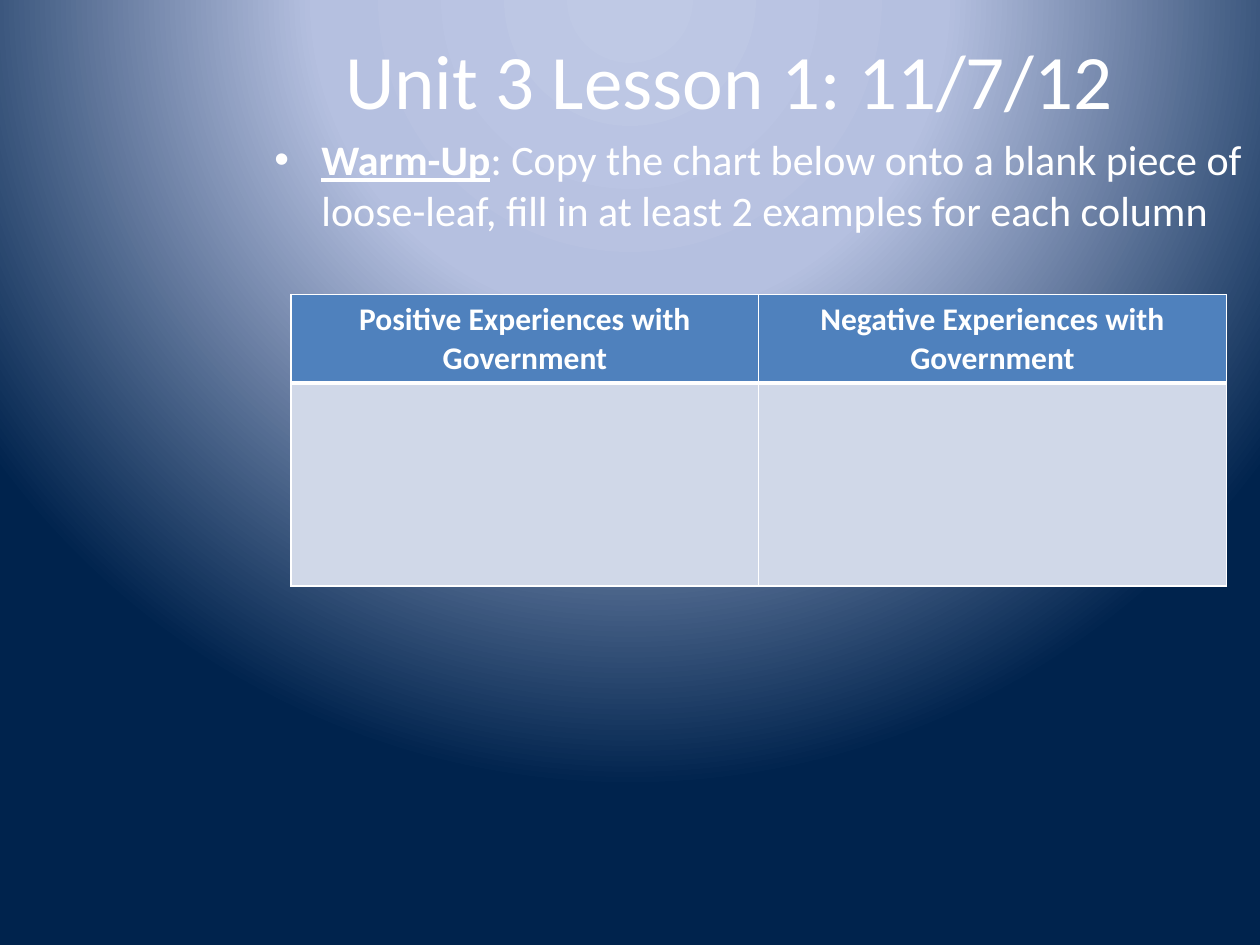
from typing import NamedTuple

from lxml import etree
from pptx import Presentation
from pptx.dml.color import RGBColor
from pptx.enum import text
from pptx.oxml.ns import qn
from pptx.util import Cm, Pt

WHITE = "FFFFFF"
HEADER_BLUE = "4F81BD"
PALE_BLUE = "D0D8E8"


class Box(NamedTuple):
    left: float
    top: float
    width: float
    height: float

    def lengths(self) -> list:
        return [Cm(value) for value in self]


class Row(NamedTuple):
    labels: tuple
    height: float
    fill: str
    top_line: float
    bottom_line: float


TITLE_BOX = Box(5.28, 0, 18.85, 3.18)
WARM_UP_BOX = Box(5.28, 2.57, 20.12, 14.7)
TABLE_BOX = Box(5.87, 5.94, 18.85, 5.87)
ROWS = [
    Row(
        ("Positive Experiences with Government", "Negative Experiences with Government"),
        1.78, HEADER_BLUE, 1, 3,
    ),
    Row(("", ""), 4.09, PALE_BLUE, 3, 1),
]
BACKGROUND_STOPS = [(0, "BFC9E5"), (40, "B5C0E0"), (100, "00234D")]


def color(value: str) -> RGBColor:
    return RGBColor.from_string(value)


def add_text(paragraph, content: str, *, size: float, bold=False, underline=False) -> None:
    run = paragraph.add_run()
    run.text = content
    run.font.name = "Calibri"
    run.font.size = Pt(size)
    run.font.bold = bold
    run.font.underline = underline
    run.font.color.rgb = color(WHITE)


def set_background(slide) -> None:
    slide.background.fill.gradient()
    gradient = slide.element.find(".//" + qn("a:gradFill"))
    for child in list(gradient):
        gradient.remove(child)
    stops = etree.SubElement(gradient, qn("a:gsLst"))
    for position, value in BACKGROUND_STOPS:
        stop = etree.SubElement(stops, qn("a:gs"), pos=str(position * 1000))
        etree.SubElement(stop, qn("a:srgbClr"), val=value)
    circle = etree.SubElement(gradient, qn("a:path"), path="circle")
    etree.SubElement(circle, qn("a:fillToRect"), l="50000", t="-80000", r="50000", b="180000")


def add_title(slide) -> None:
    title = slide.shapes.title
    title.left, title.top, title.width, title.height = TITLE_BOX.lengths()
    frame = title.text_frame
    frame.word_wrap = True
    frame.vertical_anchor = text.MSO_ANCHOR.MIDDLE
    paragraph = frame.paragraphs[0]
    paragraph.alignment = text.PP_ALIGN.CENTER
    add_text(paragraph, "Unit 3 Lesson 1: 11/7/12", size=44)


def add_warm_up(slide) -> None:
    frame = slide.shapes.add_textbox(*WARM_UP_BOX.lengths()).text_frame
    frame.word_wrap = True
    paragraph = frame.paragraphs[0]
    properties = paragraph._p.get_or_add_pPr()
    properties.set("marL", str(Cm(0.95)))
    properties.set("indent", str(-Cm(0.95)))
    etree.SubElement(properties, qn("a:buFont"), typeface="Arial")
    etree.SubElement(properties, qn("a:buChar"), char="•")
    add_text(paragraph, "Warm-Up", size=24, bold=True, underline=True)
    add_text(
        paragraph,
        ": Copy the chart below onto a blank piece of loose-leaf, "
        "fill in at least 2 examples for each column",
        size=24,
    )


def set_borders(cell, row: Row) -> None:
    properties = cell._tc.get_or_add_tcPr()
    widths = {"lnL": 1, "lnR": 1, "lnT": row.top_line, "lnB": row.bottom_line}
    for index, (side, width) in enumerate(widths.items()):
        line = etree.Element(qn(f"a:{side}"), w=str(Pt(width)))
        fill = etree.SubElement(line, qn("a:solidFill"))
        etree.SubElement(fill, qn("a:srgbClr"), val=WHITE)
        properties.insert(index, line)


def add_experience_table(slide) -> None:
    columns = len(ROWS[0].labels)
    table = slide.shapes.add_table(len(ROWS), columns, *TABLE_BOX.lengths()).table
    table.horz_banding = False
    for row_index, row in enumerate(ROWS):
        table.rows[row_index].height = Cm(row.height)
        for column_index, label in enumerate(row.labels):
            cell = table.cell(row_index, column_index)
            cell.fill.solid()
            cell.fill.fore_color.rgb = color(row.fill)
            set_borders(cell, row)
            if label:
                paragraph = cell.text_frame.paragraphs[0]
                paragraph.alignment = text.PP_ALIGN.CENTER
                add_text(paragraph, label, size=18, bold=True)


def main() -> None:
    presentation = Presentation()
    presentation.slide_width = Cm(25.4)
    presentation.slide_height = Cm(19.05)
    slide = presentation.slides.add_slide(presentation.slide_layouts[5])
    set_background(slide)
    add_title(slide)
    add_warm_up(slide)
    add_experience_table(slide)
    presentation.save("out.pptx")


if __name__ == "__main__":
    main()
